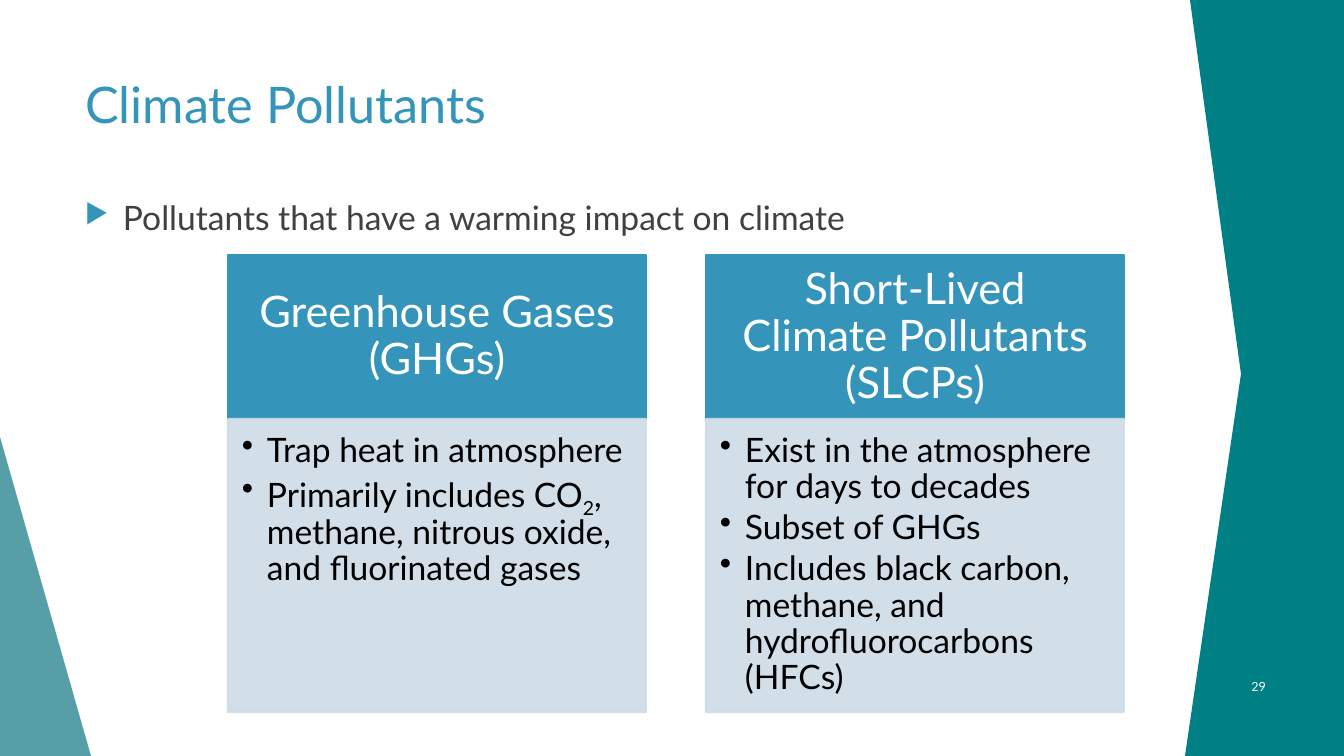
import pptx
import pptx.dml.color
import pptx.enum.shapes
import pptx.enum.text
import pptx.oxml.ns
import pptx.util
from lxml import etree

RGB = pptx.dml.color.RGBColor
BLUE = RGB(0x34, 0x94, 0xBA)
PALE_BLUE = RGB(0xCE, 0xDC, 0xE7)
TEAL = RGB(0x00, 0x80, 0x85)
SOFT_TEAL = RGB(0x3A, 0x8F, 0x98)
GREY = RGB(0x40, 0x40, 0x40)
BLACK = RGB(0, 0, 0)
WHITE = RGB(0xFF, 0xFF, 0xFF)
FONT = "Lato"
ANCHOR = pptx.enum.text.MSO_ANCHOR
ALIGN = pptx.enum.text.PP_ALIGN

TITLE = "Climate Pollutants"
INTRO = "Pollutants that have a warming impact on climate"
PAGE_NUMBER = "29"
# Each bullet is a list of (text, baseline shift in percent).
CARDS = [
    ("Greenhouse Gases (GHGs)", [
        [("Trap heat in atmosphere", 0)],
        [("Primarily includes CO", 0), ("2", -25),
         (", methane, nitrous oxide, and fluorinated gases", 0)],
    ]),
    ("Short-Lived Climate Pollutants (SLCPs)", [
        [("Exist in the atmosphere for days to decades", 0)],
        [("Subset of GHGs", 0)],
        [("Includes black carbon, methane, and hydrofluorocarbons (HFCs)", 0)],
    ]),
]
DECORATIONS = [
    ([(0, 437), (91, 756), (0, 756)], SOFT_TEAL, 85),
    ([(1344, 0), (1344, 756), (1185, 756), (1241, 374), (1190, 0)], TEAL, 100),
]

SLIDE_W, SLIDE_H = 1344, 756
CARD_LEFT, CARD_TOP, CARD_W, CARD_STEP = 228, 255, 418, 478
HEADING_H, DETAILS_H = 164, 293
EMU_PER_PX = 914400 / 100.8


def emu(px):
    return pptx.util.Emu(round(px * EMU_PER_PX))


def style(paragraph, size, color, align=ALIGN.LEFT):
    paragraph.alignment = align
    paragraph.font.name = FONT
    paragraph.font.size = pptx.util.Pt(size)
    paragraph.font.color.rgb = color


def set_bullet(paragraph, char, indent, color=None, percent=None):
    """Give the paragraph a hanging bullet; call before styling its font."""
    props = paragraph._p.get_or_add_pPr()
    props.set("marL", str(emu(indent)))
    props.set("indent", str(-emu(indent)))

    def add(parent, tag, **attributes):
        return etree.SubElement(parent, pptx.oxml.ns.qn(tag), **attributes)

    if color is not None:
        add(add(props, "a:buClr"), "a:srgbClr", val=str(color))
    if percent is not None:
        add(props, "a:buSzPct", val=str(percent * 1000))
    add(props, "a:buChar", char=char)


def paint(shape, color, opacity=100, outlined=False):
    """Colour a shape that holds no text yet."""
    shape.shadow.inherit = False
    shape.fill.solid()
    shape.fill.fore_color.rgb = color
    if outlined:
        shape.line.color.rgb = color
        shape.line.width = pptx.util.Pt(1.5)
    else:
        shape.line.fill.background()
    if opacity < 100:
        for tone in shape._element.iter(pptx.oxml.ns.qn("a:srgbClr")):
            etree.SubElement(tone, pptx.oxml.ns.qn("a:alpha"), val=str(opacity * 1000))


def set_frame(shape, anchor, insets=(10, 5, 10, 5)):
    frame = shape.text_frame
    frame.word_wrap = True
    frame.auto_size = pptx.enum.text.MSO_AUTO_SIZE.NONE
    frame.vertical_anchor = anchor
    (frame.margin_left, frame.margin_top,
     frame.margin_right, frame.margin_bottom) = map(emu, insets)
    return frame


def add_text_box(slide, box, anchor):
    return set_frame(slide.shapes.add_textbox(*map(emu, box)), anchor)


def add_panel(slide, box, color, opacity, anchor, insets):
    panel = slide.shapes.add_shape(
        pptx.enum.shapes.MSO_SHAPE.RECTANGLE, *map(emu, box))
    paint(panel, color, opacity, outlined=True)
    return set_frame(panel, anchor, insets)


def add_card(slide, left, heading, bullets):
    frame = add_panel(slide, (left, CARD_TOP, CARD_W, HEADING_H),
                      BLUE, 100, ANCHOR.MIDDLE, (24, 14, 24, 14))
    title = frame.paragraphs[0]
    title.text = heading
    title.line_spacing = 0.9
    style(title, 31, WHITE, ALIGN.CENTER)

    frame = add_panel(slide, (left, CARD_TOP + HEADING_H, CARD_W, DETAILS_H),
                      PALE_BLUE, 90, ANCHOR.TOP, (14, 14, 19, 21))
    for index, pieces in enumerate(bullets):
        detail = frame.add_paragraph() if index else frame.paragraphs[0]
        detail.line_spacing = 0.9
        detail.space_after = pptx.util.Pt(3.6)
        set_bullet(detail, "•", 25)
        style(detail, 24, BLACK)
        for text, shift in pieces:
            run = detail.add_run()
            run.text = text
            if shift:
                run._r.get_or_add_rPr().set("baseline", str(shift * 1000))


def main():
    deck = pptx.Presentation()
    deck.slide_width, deck.slide_height = emu(SLIDE_W), emu(SLIDE_H)
    slide = deck.slides.add_slide(deck.slide_layouts[5])

    for points, color, opacity in DECORATIONS:
        outline = slide.shapes.build_freeform(*points[0], scale=EMU_PER_PX)
        outline.add_line_segments(points[1:], close=True)
        paint(outline.convert_to_shape(), color, opacity)

    title = slide.shapes.title
    title.left, title.top, title.width, title.height = map(emu, (75, 68, 1202, 145))
    heading = set_frame(title, ANCHOR.TOP).paragraphs[0]
    heading.text = TITLE
    style(heading, 36, BLUE)

    intro = add_text_box(slide, (75, 192, 1202, 79), ANCHOR.TOP).paragraphs[0]
    intro.text = INTRO
    set_bullet(intro, "▶", 38, BLUE, 80)
    style(intro, 24, GREY)

    number = add_text_box(slide, (1201, 667, 75, 40), ANCHOR.MIDDLE).paragraphs[0]
    number.text = PAGE_NUMBER
    style(number, 9, WHITE, ALIGN.RIGHT)

    for index, (card_heading, bullets) in enumerate(CARDS):
        add_card(slide, CARD_LEFT + index * CARD_STEP, card_heading, bullets)

    deck.save("out.pptx")


if __name__ == "__main__":
    main()
